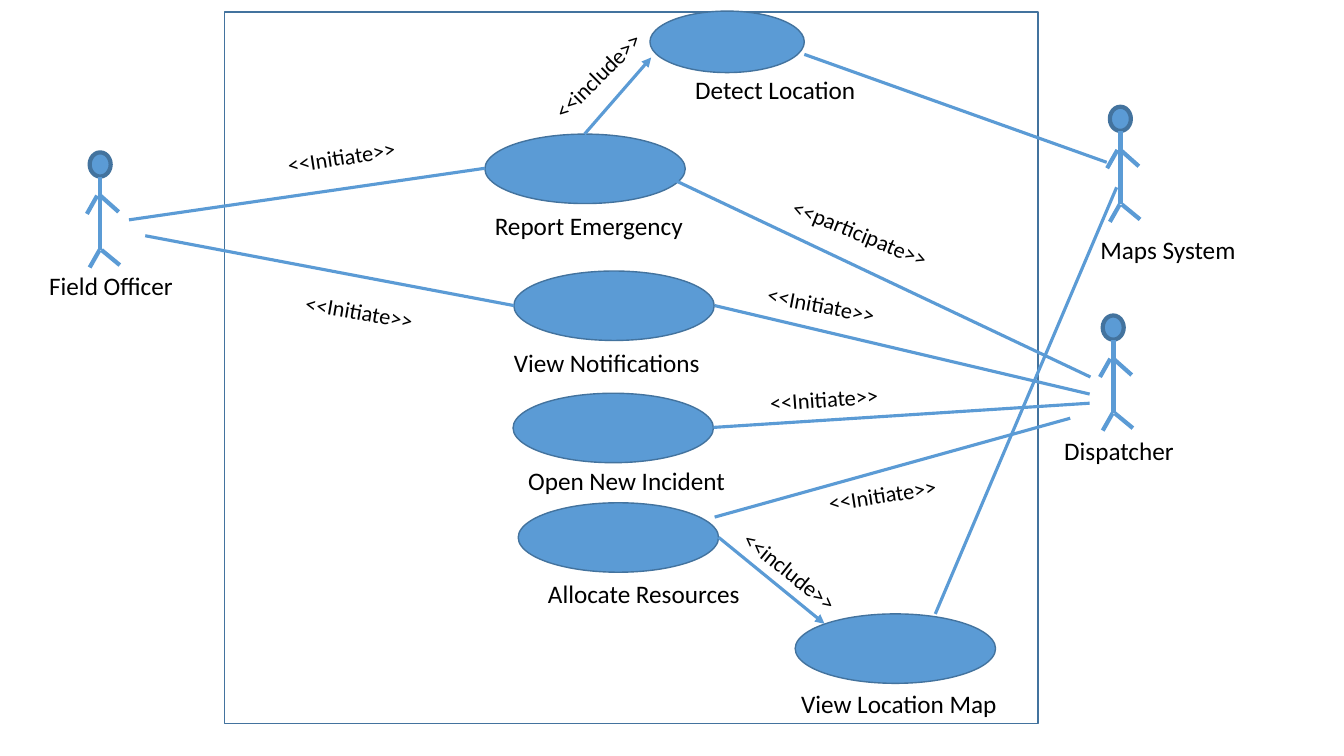
from lxml import etree
from pptx import Presentation, util as u
from pptx.dml.color import RGBColor
from pptx.enum import shapes, text
from pptx.oxml.ns import qn

COLORS = {"fill": "5B9BD5", "outline": "43739E", "paper": "FFFFFF", "ink": "000000"}
LIMBS = [
    (0.27, 0.61, 0.27, 2.46),
    (0.3, 2.46, 0.76, 2.84),
    (0.25, 2.46, 0, 2.9),
    (0.27, 1.09, 0.73, 1.5),
    (0.19, 1.09, -0.07, 1.55),
]
ACTORS = [
    ("Field Officer", (2.26, 3.84), (0.99, 6.68, 3.68)),
    ("Maps System", (27.97, 2.69), (27.48, 5.79, 3.96)),
    ("Dispatcher", (27.79, 7.95), (26.57, 10.85, 3.3)),
]
USE_CASES = [
    ("Detect Location", (16.38, 0.28, 3.89, 1.55), (17.27, 1.75, 4.6)),
    ("Report Emergency", (12.22, 3.38, 5.05, 1.75), (12.22, 5.18, 5.31)),
    ("View Notifications", (12.95, 6.83, 5.05, 1.75), (12.7, 8.64, 5.26)),
    ("Open New Incident", (12.93, 9.91, 5.05, 1.75), (13.06, 11.61, 5.54)),
    ("Allocate Resources", (13.06, 12.67, 5.05, 1.75), (13.56, 14.45, 5.38)),
    ("View Location Map", (20.04, 15.47, 5.05, 1.75), (19.94, 17.22, 5.51)),
]
ASSOCIATIONS = [
    (3.25, 5.54, 12.22, 4.24),
    (3.66, 5.94, 12.95, 7.7),
    (20.27, 1.37, 27.89, 4.09),
    (18.01, 7.7, 27.46, 9.93),
    (17.98, 10.77, 27.46, 10.16),
    (18.01, 13.03, 26.97, 10.54),
    (17.02, 4.55, 27.48, 9.5),
    (23.57, 15.47, 28.14, 4.72),
]
INCLUDES = [(14.73, 3.38, 16.41, 1.45), (18.11, 13.54, 20.78, 15.72)]
STEREOTYPES = [
    ("<<include>>", (13.41, 1.42, 3.33), -44.8),
    ("<<include>>", (18.26, 13.94, 3.33), 38.9),
    ("<<Initiate>>", (6.99, 3.48, 3.28), -8.7),
    ("<<Initiate>>", (7.44, 7.39, 3.28), 9.7),
    ("<<Initiate>>", (19.08, 7.21, 3.28), 10.9),
    ("<<Initiate>>", (19.15, 9.58, 3.28), -4),
    ("<<Initiate>>", (20.62, 11.99, 3.28), -8.7),
    ("<<participate>>", (19.63, 5.41, 4.14), 22.1),
]


class Diagram:
    font = "Calibri"

    def __init__(self, slide):
        self.slide = slide

    def color(self, name):
        return RGBColor.from_string(COLORS[name])

    def shape(self, kind, box, fill="fill", width=1, parent=None):
        parent = parent or self.slide.shapes
        sp = parent.add_shape(kind, *map(u.Cm, box))
        sp.shadow.inherit = False
        sp.fill.solid()
        sp.fill.fore_color.rgb = self.color(fill)
        sp.line.color.rgb = self.color("outline")
        sp.line.width = u.Pt(width)

    def line(self, ends, width=2.25, arrow=False, parent=None):
        parent = parent or self.slide.shapes
        cn = parent.add_connector(shapes.MSO_CONNECTOR.STRAIGHT, *map(u.Cm, ends))
        cn.line.color.rgb = self.color("fill")
        cn.line.width = u.Pt(width)
        props = cn._element.spPr
        if arrow:
            etree.SubElement(props.find(qn("a:ln")), qn("a:tailEnd"), type="triangle")
        etree.SubElement(props, qn("a:effectLst"))

    def label(self, words, place, size=18, height=1.02, rotation=0):
        sp = self.slide.shapes.add_textbox(*map(u.Cm, (*place, height)))
        sp.rotation = rotation
        tf = sp.text_frame
        tf.word_wrap = False
        tf.auto_size = text.MSO_AUTO_SIZE.SHAPE_TO_FIT_TEXT
        r = tf.paragraphs[0].add_run()
        r.text = words
        r.font.name = self.font
        r.font.size = u.Pt(size)
        r.font.color.rgb = self.color("ink")

    def actor(self, name, origin, place):
        x, y = origin
        figure = self.slide.shapes.add_group_shape().shapes
        self.shape(shapes.MSO_SHAPE.OVAL, (x, y, 0.53, 0.61), width=3, parent=figure)
        for x1, y1, x2, y2 in LIMBS:
            self.line((x + x1, y + y1, x + x2, y + y2), 3, parent=figure)
        self.label(name, place)

    def use_case(self, name, box, place):
        self.shape(shapes.MSO_SHAPE.OVAL, box)
        self.label(name, place)


def main():
    prs = Presentation()
    prs.slide_width, prs.slide_height = u.Cm(33.87), u.Cm(19.05)
    diagram = Diagram(prs.slides.add_slide(prs.slide_layouts[6]))
    diagram.shape(shapes.MSO_SHAPE.RECTANGLE, (5.66, 0.3, 20.5, 17.93), "paper")
    for use_case in USE_CASES:
        diagram.use_case(*use_case)
    for actor in ACTORS:
        diagram.actor(*actor)
    for ends in ASSOCIATIONS:
        diagram.line(ends)
    for ends in INCLUDES:
        diagram.line(ends, arrow=True)
    for words, place, angle in STEREOTYPES:
        diagram.label(words, place, 16, 0.94, angle)
    prs.save("out.pptx")


if __name__ == "__main__":
    main()
